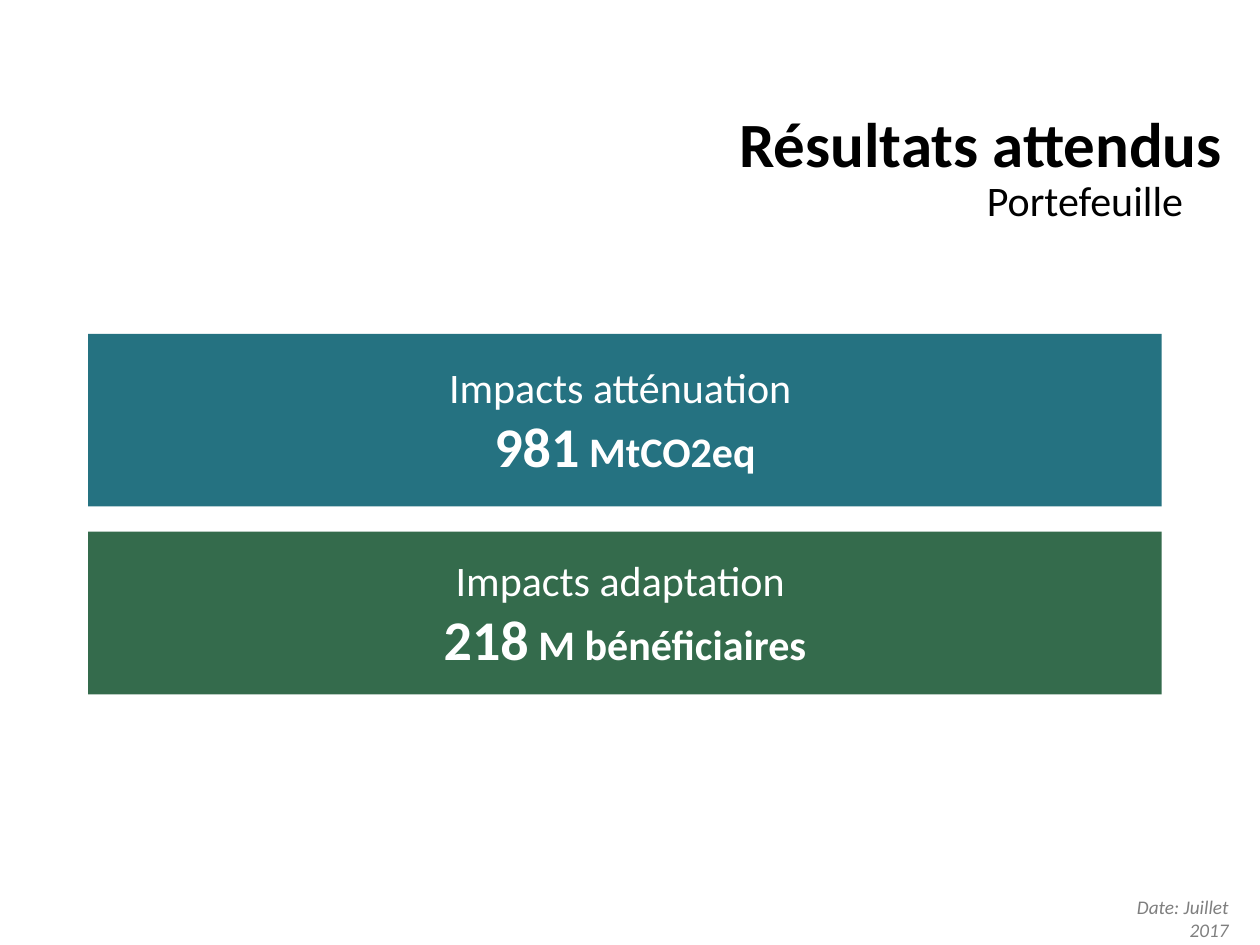
from pptx import Presentation
from pptx.dml.color import RGBColor
from pptx.enum.shapes import MSO_SHAPE
from pptx.enum.text import MSO_ANCHOR, PP_ALIGN
from pptx.util import Cm, Pt

RECTANGLE = MSO_SHAPE.RECTANGLE
TOP, MIDDLE = MSO_ANCHOR.TOP, MSO_ANCHOR.MIDDLE
RIGHT, CENTER = PP_ALIGN.RIGHT, PP_ALIGN.CENTER

BLACK = RGBColor(0x00, 0x00, 0x00)
WHITE = RGBColor(0xFF, 0xFF, 0xFF)
GREY = RGBColor(0x7F, 0x7F, 0x7F)
TEAL = RGBColor(0x25, 0x72, 0x81)
GREEN = RGBColor(0x34, 0x6B, 0x4C)

FONT = "Calibri"
BAND_LEFT, BAND_WIDTH = 1.78, 21.64


def style_run(run, size, color, bold=False, italic=False):
    """Set the font of one run."""
    font = run.font
    font.name, font.size = FONT, Pt(size)
    font.bold, font.italic = bold, italic
    font.color.rgb = color


def add_heading(slide, box, text, size, color=BLACK, anchor=TOP, **emphasis):
    """Add a right-aligned line of text."""
    frame = slide.shapes.add_textbox(*map(Cm, box)).text_frame
    frame.word_wrap = True
    frame.vertical_anchor = anchor
    frame.text = text
    paragraph = frame.paragraphs[0]
    paragraph.alignment = RIGHT
    style_run(paragraph.runs[0], size, color, **emphasis)


def add_impact_band(slide, top, height, fill, label, value, unit):
    """Add a coloured band with a label above its figure and unit."""
    band = slide.shapes.add_shape(
        RECTANGLE, Cm(BAND_LEFT), Cm(top), Cm(BAND_WIDTH), Cm(height))
    band.shadow.inherit = False
    band.fill.solid()
    band.fill.fore_color.rgb = fill
    band.line.fill.background()

    frame = band.text_frame
    frame.word_wrap = True
    frame.vertical_anchor = MIDDLE
    frame.text = label
    label_line, figure_line = frame.paragraphs[0], frame.add_paragraph()
    style_run(label_line.runs[0], 24, WHITE)
    for text, size in ((value, 32), (unit, 24)):
        run = figure_line.add_run()
        run.text = text
        style_run(run, size, WHITE, bold=True)
    for line in (label_line, figure_line):
        line.alignment = CENTER


def main():
    """Build the expected results slide."""
    deck = Presentation()
    deck.slide_width, deck.slide_height = Cm(25.4), Cm(19.05)
    slide = deck.slides.add_slide(deck.slide_layouts[6])

    add_heading(slide, (2.87, 3.15, 21.23, 1.75), "Portefeuille", 24,
                anchor=MIDDLE)
    add_impact_band(slide, 6.73, 3.48, TEAL,
                    "Impacts atténuation ", "981", " MtCO2eq")
    add_impact_band(slide, 10.72, 3.28, GREEN,
                    "Impacts adaptation ", "218", " M bénéficiaires")
    add_heading(slide, (4.11, 1.98, 20.78, 1.8), "Résultats attendus", 36,
                bold=True)
    add_heading(slide, (21.82, 17.93, 3.2, 0.74), "Date: Juillet 2017", 11,
                color=GREY, italic=True)

    deck.save("out.pptx")


if __name__ == "__main__":
    main()
